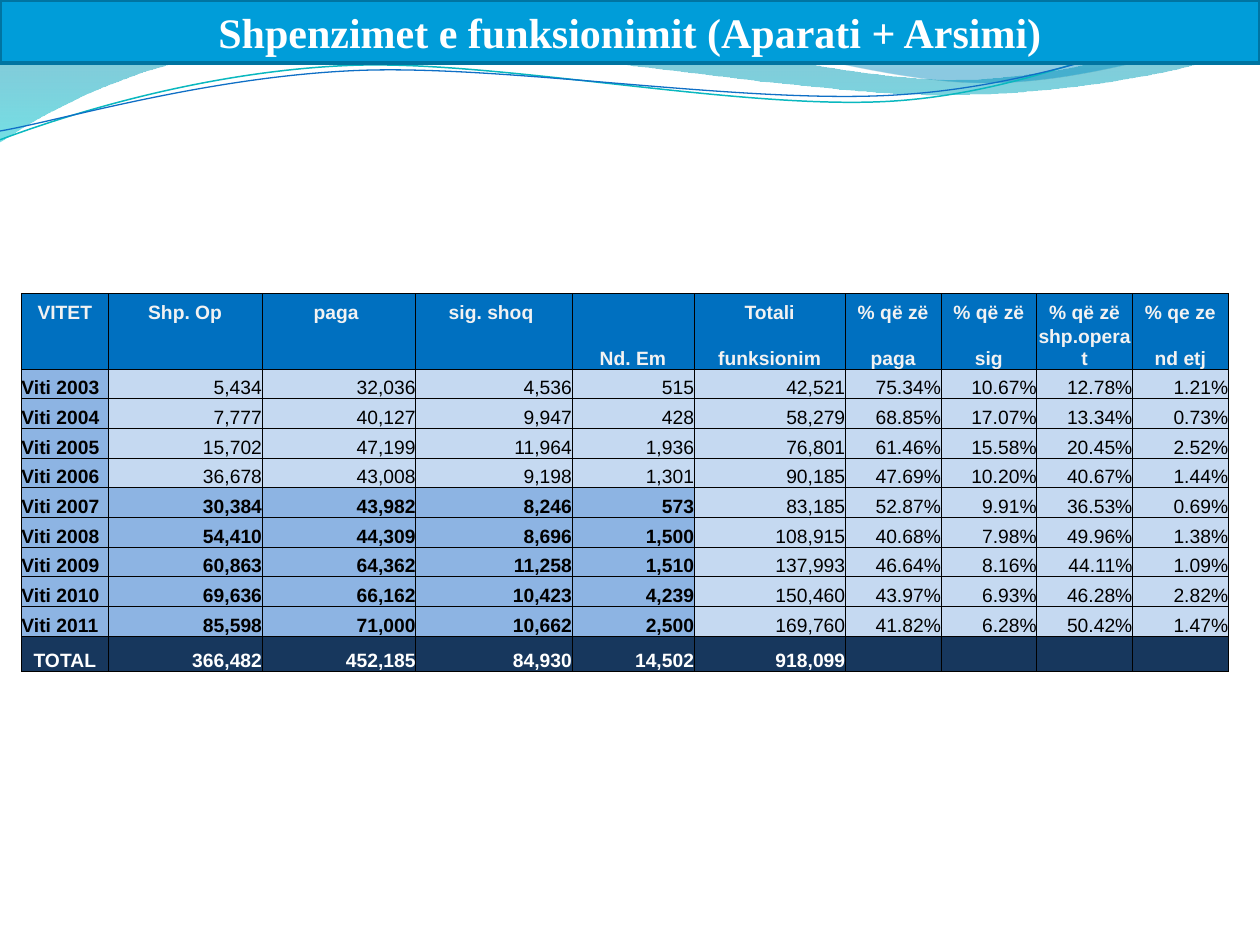
from lxml import etree
from pptx import Presentation
from pptx import util as u
from pptx.dml import color
from pptx.enum import text
from pptx.oxml import ns

COLUMN_WIDTHS = [0.69, 1.22, 1.22, 1.24, 0.97, 1.2] + [0.76] * 4
ROW_HEIGHTS = [0.24, 0.36] + [2.12 / 9] * 9 + [0.28]
HEADER = [
    ["VITET", "Shp. Op", "paga ", "sig. shoq ", "", "Totali",
     "% që zë", "% që zë", "% që zë", "% qe ze"],
    ["", "", "", "", "Nd. Em", "funksionim", "paga", "sig", "shp.operat", "nd etj"],
]
YEARS = """
5,434 32,036 4,536 515 42,521 75.34% 10.67% 12.78% 1.21%
7,777 40,127 9,947 428 58,279 68.85% 17.07% 13.34% 0.73%
15,702 47,199 11,964 1,936 76,801 61.46% 15.58% 20.45% 2.52%
36,678 43,008 9,198 1,301 90,185 47.69% 10.20% 40.67% 1.44%
30,384 43,982 8,246 573 83,185 52.87% 9.91% 36.53% 0.69%
54,410 44,309 8,696 1,500 108,915 40.68% 7.98% 49.96% 1.38%
60,863 64,362 11,258 1,510 137,993 46.64% 8.16% 44.11% 1.09%
69,636 66,162 10,423 4,239 150,460 43.97% 6.93% 46.28% 2.82%
85,598 71,000 10,662 2,500 169,760 41.82% 6.28% 50.42% 1.47%
""".strip().splitlines()
TOTAL = ["TOTAL", "366,482", "452,185", "84,930", "14,502", "918,099"] + [""] * 4

# Each wave is a start point, then lines (one point) and curves (three points)
LEFT_WAVE = [(0, 0), [(4.4, -0.01)],
             [(4.76, 0.17), (6.64, 0.63), (7.58, 0.63)],
             [(8.53, 0.63), (9.58, 0.26), (10, 0.09)], [(10.01, 0.36)],
             [(9.83, 0.44), (8.7, 0.76), (7.46, 0.75)],
             [(6.22, 0.75), (3.82, 0.28), (2.57, 0.34)],
             [(1.29, 0.36), (0.46, 0.83), (-0.01, 1.13)], [(0, 0)]]
RIGHT_WAVE = [(4.79, -0.01), [(5.09, 0.11), (6.82, 0.62), (7.69, 0.65)],
              [(8.56, 0.69), (9.61, 0.32), (10, 0.21)], [(10, 0)], [(4.79, -0.01)]]
TEAL_LINE = [(0, 1.11), [(0.48, 0.93), (1.58, 0.57), (2.77, 0.52)],
             [(3.95, 0.47), (5.93, 0.89), (7.13, 0.8)],
             [(8.33, 0.71), (9.38, 0.15), (9.98, -0.02)]]
BLUE_LINE = [(0, 1.04), [(0.47, 0.96), (1.64, 0.61), (2.83, 0.56)],
             [(4.03, 0.51), (5.97, 0.84), (7.17, 0.75)],
             [(8.36, 0.67), (9.41, 0.21), (10, 0.06)]]


def rgb(value):
    return color.RGBColor.from_string(value)


def write(frame, words, size=11, font="Arial", ink="000000", bold=False, align="LEFT"):
    paragraph = frame.paragraphs[0]
    paragraph.alignment = getattr(text.PP_ALIGN, align)
    if not words:  # keeps an empty cell from growing its row
        etree.SubElement(paragraph._p, ns.qn("a:endParaRPr"), sz=str(size * 100))
        return
    run = paragraph.add_run()
    run.text = words
    run.font.size, run.font.name, run.font.bold = u.Pt(size), font, bold
    run.font.color.rgb = rgb(ink)


class Deck:
    header_fill, total_fill = "0070C0", "17375D"
    strong_fill, light_fill = "8DB4E3", "C5D9F1"
    no_table_style = "{2D5ABB26-0587-4C30-8999-92F81FD0307C}"

    def __init__(self):
        self.presentation = Presentation()
        self.presentation.slide_width = u.Inches(10)
        self.presentation.slide_height = u.Inches(7.5)
        self.slide = self.presentation.slides.add_slide(self.presentation.slide_layouts[5])

    def wave(self, outline, closed):
        start, *segments = outline
        builder = self.slide.shapes.build_freeform(u.Inches(start[0]), u.Inches(start[1]))
        builder.add_line_segments(
            [(u.Inches(x), u.Inches(y)) for segment in segments for x, y in segment],
            close=closed)
        shape = builder.convert_to_shape()
        shape.shadow.inherit = False
        # Join each run of three points into one cubic curve
        nodes = iter(list(shape.element.iter(ns.qn("a:lnTo"))))
        for segment in segments:
            first, *others = [next(nodes) for _ in segment]
            if others:
                curve = etree.Element(ns.qn("a:cubicBezTo"))
                first.addprevious(curve)
                for node in (first, *others):
                    curve.append(node[0])
                    node.getparent().remove(node)
        return shape

    def wave_area(self, outline, stops):
        shape = self.wave(outline, True)
        shape.line.fill.background()
        shape.fill.gradient()
        shape.fill.gradient_angle = 270
        for stop, (position, tint, _) in zip(shape.fill.gradient_stops, stops):
            stop.position = position
            stop.color.rgb = rgb(tint)
        for node, (_, _, opacity) in zip(shape.element.iter(ns.qn("a:srgbClr")), stops):
            etree.SubElement(node, ns.qn("a:alpha"), val=str(opacity * 1000))

    def wave_line(self, outline, ink, width):
        shape = self.wave(outline, False)
        shape.fill.background()
        shape.line.color.rgb = rgb(ink)
        shape.line.width = u.Pt(width)

    def title(self, words):
        shape = self.slide.shapes.title
        shape.left, shape.top, shape.width, shape.height = map(u.Inches, (0, 0, 10, 0.5))
        shape.fill.solid()
        shape.fill.fore_color.rgb = rgb("009DD9")
        shape.line.color.rgb = rgb("0074A1")
        shape.line.width = u.Pt(2)
        frame = shape.text_frame
        frame.vertical_anchor = text.MSO_ANCHOR.MIDDLE
        frame.auto_size = text.MSO_AUTO_SIZE.NONE
        write(frame, words, size=24, font="Times New Roman", ink="FFFFFF",
              bold=True, align="CENTER")
        shape.element.getparent().append(shape.element)  # in front of the waves

    def cell(self, cell, words, fill, sides="LRTB", **style):
        cell.margin_left = cell.margin_right = cell.margin_top = cell.margin_bottom = 0
        cell.vertical_anchor = text.MSO_ANCHOR.BOTTOM
        for side in sides:
            line = etree.SubElement(cell._tc.get_or_add_tcPr(), ns.qn("a:ln" + side), w="6350")
            solid = etree.SubElement(line, ns.qn("a:solidFill"))
            etree.SubElement(solid, ns.qn("a:srgbClr"), val="000000")
        cell.fill.solid()
        cell.fill.fore_color.rgb = rgb(fill)
        write(cell.text_frame, words, **style)

    def table(self, left, top):
        frame = self.slide.shapes.add_table(
            len(ROW_HEIGHTS), len(COLUMN_WIDTHS), u.Inches(left), u.Inches(top),
            u.Inches(sum(COLUMN_WIDTHS)), u.Inches(sum(ROW_HEIGHTS)))
        table = frame.table
        table.first_row = table.horz_banding = False
        next(frame.element.iter(ns.qn("a:tableStyleId"))).text = self.no_table_style
        for column, width in zip(table.columns, COLUMN_WIDTHS):
            column.width = u.Inches(width)
        for row, height in zip(table.rows, ROW_HEIGHTS):
            row.height = u.Inches(height)

        # Two header rows read as one: no line between them
        for row, (words, sides) in enumerate(zip(HEADER, ("LRT", "LRB"))):
            for column, word in enumerate(words):
                self.cell(table.cell(row, column), word, self.header_fill, sides,
                          ink="F2F2F2", bold=True, align="CENTER")
        # Years: the label, and the first four amounts from 2007 on, stand out
        for index, line in enumerate(YEARS):
            year = 2003 + index
            for column, word in enumerate([f"Viti {year}", *line.split()]):
                strong = column == 0 or (year >= 2007 and column <= 4)
                self.cell(table.cell(index + 2, column), word,
                          self.strong_fill if strong else self.light_fill,
                          bold=strong, align="RIGHT" if column else "LEFT")
        # Total row
        for column, word in enumerate(TOTAL):
            self.cell(table.cell(len(ROW_HEIGHTS) - 1, column), word, self.total_fill,
                      ink="FFFFFF", bold=True, align="RIGHT" if column else "CENTER")


def main():
    deck = Deck()
    # Background waves
    deck.wave_area(LEFT_WAVE, [(0, "0074A1", 45), (1, "00C6CF", 55)])
    deck.wave_area(RIGHT_WAVE, [(0, "00A1A9", 30), (0.8, "008BBF", 45)])
    deck.wave_line(TEAL_LINE, "0AB8BF", 0.85)
    deck.wave_line(BLUE_LINE, "0F6FC6", 0.75)
    # Title band and expenses table
    deck.title("Shpenzimet e funksionimit (Aparati + Arsimi)")
    deck.table(0.17, 2.33)
    deck.presentation.save("out.pptx")


if __name__ == "__main__":
    main()
